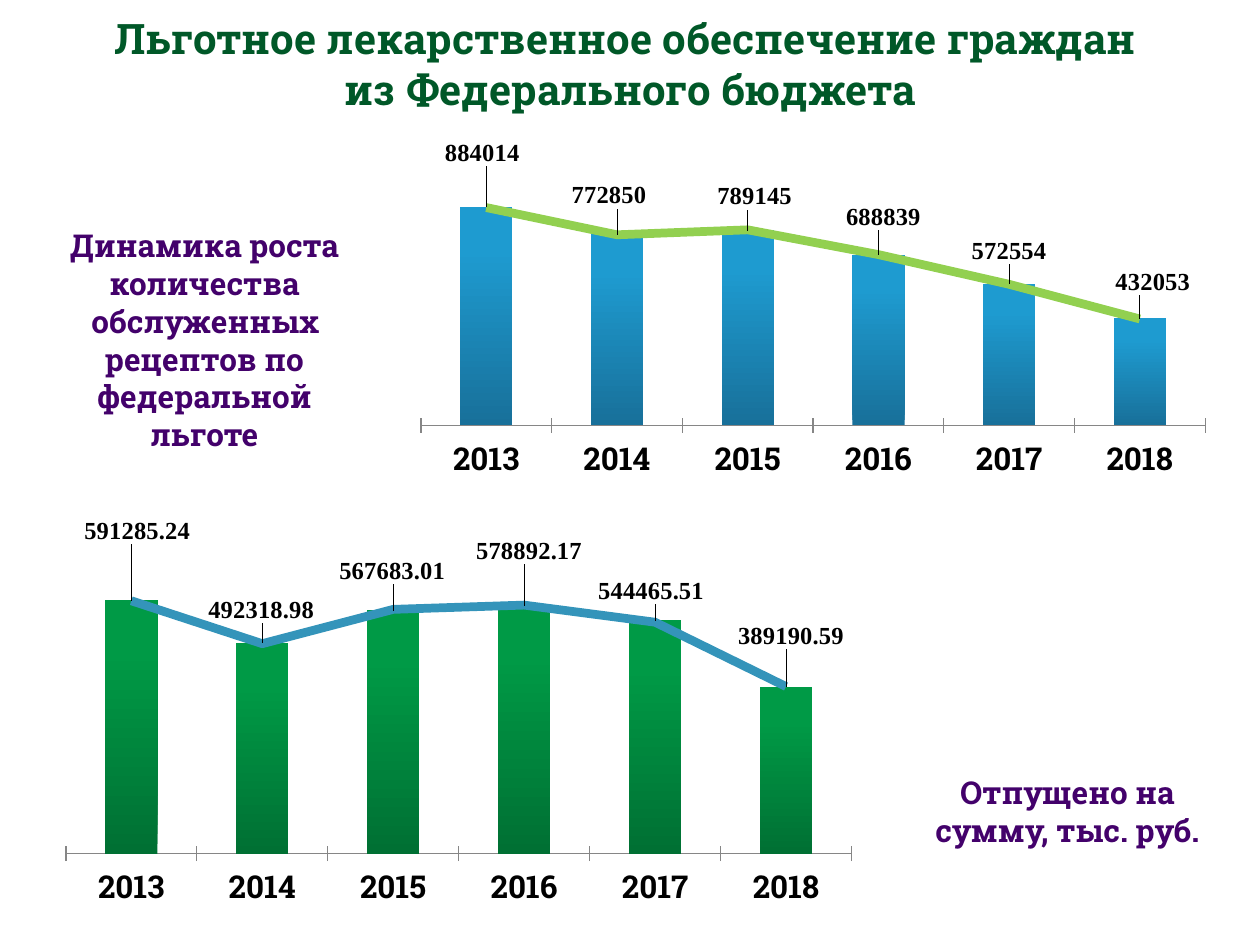
"""Slide with two column-and-line charts on subsidised medicine supply."""
from dataclasses import dataclass
from typing import Any

import pptx
import pptx.chart.data
import pptx.dml.color
import pptx.enum.chart
import pptx.enum.text
import pptx.oxml
import pptx.oxml.ns
import pptx.util

SCALE = 914400 / 126
YEARS = [str(year) for year in range(2013, 2019)]


@dataclass(frozen=True)
class Theme:
    font: str = "Roboto Slab"
    label_font: str = "Times New Roman"
    title: str = "005828"
    caption: str = "43016B"
    text: str = "000000"
    axis: str = "868686"
    title_size: int = 24
    body_size: int = 18
    label_size: int = 14
    line_width: int = 5


@dataclass(frozen=True)
class Box:
    x: int
    y: int
    w: int
    h: int


@dataclass(frozen=True)
class Caption:
    box: Box
    text: str
    size: int
    color: str
    anchor: Any = pptx.enum.text.MSO_ANCHOR.TOP


@dataclass(frozen=True)
class Combo:
    box: Box
    plot: tuple[float, float, float, float]
    columns: list[float]
    trend: list[float]
    top: int
    dark: str
    light: str
    line: str
    shifts: list[tuple[int, int]]


THEME = Theme()

CAPTIONS = [
    Caption(Box(35, 10, 1191, 106),
            "Льготное лекарственное обеспечение граждан \vиз Федерального бюджета",
            THEME.title_size, THEME.title, pptx.enum.text.MSO_ANCHOR.MIDDLE),
    Caption(Box(40, 220, 329, 242),
            "Динамика роста количества обслуженных рецептов по федеральной льготе",
            THEME.body_size, THEME.caption),
    Caption(Box(903, 767, 329, 90), "Отпущено на сумму, тыс. руб.",
            THEME.body_size, THEME.caption),
]

COMBOS = [
    Combo(Box(402, 136, 823, 358), (0.023, 0.117, 0.953, 0.692),
          [884014, 772850, 789145, 688839, 572554, 432053],
          [880000, 770000, 790000, 690000, 570000, 430000],
          1000000, "18709A", "1E9BD0", "92D050",
          [(-4, -35), (-8, -20), (7, -15), (5, -19), (0, -14), (13, -18)]),
    Combo(Box(-43, 514, 900, 397), (0.121, 0.1, 0.873, 0.756),
          [591285.24, 492318.98, 567683.01, 578892.17, 544465.51, 389190.59],
          [590000, 490000, 570000, 580000, 540000, 390000],
          700000, "007033", "009A46", "3494BA",
          [(6, -51), (-1, -14), (-1, -21), (5, -36), (-4, -11), (5, -32)]),
]


def emu(px: int) -> int:
    return round(px * SCALE)


def place(box: Box) -> list[int]:
    return [emu(v) for v in (box.x, box.y, box.w, box.h)]


def rgb(color: str) -> pptx.dml.color.RGBColor:
    return pptx.dml.color.RGBColor.from_string(color)


def apply(target: Any, values: dict[str, Any]) -> None:
    for name, value in values.items():
        setattr(target, name, value)


def style_font(font: Any, name: str, size: int, color: str, bold: bool = True) -> None:
    apply(font, {"name": name, "size": pptx.util.Pt(size), "bold": bold})
    font.color.rgb = rgb(color)


def xml(body: str) -> Any:
    tag, _, rest = body.partition(">")
    return pptx.oxml.parse_xml(f"{tag} {pptx.oxml.ns.nsdecls('c')}>{rest}")


def layout(fields: dict[str, Any]) -> Any:
    inner = "".join(f'<c:{k} val="{v}"/>' for k, v in fields.items())
    return xml(f"<c:layout><c:manualLayout>{inner}</c:manualLayout></c:layout>")


def add_caption(s: Any, item: Caption) -> None:
    tf = s.shapes.add_textbox(*place(item.box)).text_frame
    apply(tf, {"word_wrap": True, "vertical_anchor": item.anchor, "text": item.text})
    p = tf.paragraphs[0]
    p.alignment = pptx.enum.text.PP_ALIGN.CENTER
    for r in p.runs:
        style_font(r.font, THEME.font, item.size, item.color)


def split_trend(chart: Any) -> None:
    bar = chart.element.xpath(".//c:barChart")[0]
    ser = bar.xpath("c:ser")[1]
    for old in ser.xpath("c:invertIfNegative"):
        ser.remove(old)
    line = xml('<c:lineChart><c:grouping val="standard"/><c:varyColors val="0"/>'
               '<c:marker val="1"/></c:lineChart>')
    line.insert(2, ser)
    for axis in bar.xpath("c:axId"):
        line.append(xml(f'<c:axId><!-- --></c:axId>'))
        line[-1].set("val", axis.get("val"))
        line[-1].remove(line[-1][0])
    bar.addnext(line)


def style_axes(chart: Any, top: int) -> None:
    apply(chart.value_axis, {"minimum_scale": 0, "maximum_scale": top,
                             "has_major_gridlines": False, "visible": False})
    axis = chart.category_axis
    apply(axis, {"major_tick_mark": pptx.enum.chart.XL_TICK_MARK.CROSS,
                 "has_major_gridlines": False})
    axis.format.line.color.rgb = rgb(THEME.axis)
    style_font(axis.tick_labels.font, THEME.font, THEME.body_size, THEME.text)


def style_columns(ser: Any, item: Combo) -> None:
    fill = ser.format.fill
    fill.gradient()
    fill.gradient_angle = 90
    for stop, color, position in zip(fill.gradient_stops, (item.dark, item.light), (0, 0.8)):
        stop.color.rgb = rgb(color)
        stop.position = position


def add_labels(chart: Any, ser: Any, item: Combo) -> None:
    position = pptx.enum.chart.XL_LABEL_POSITION.OUTSIDE_END
    apply(ser.data_labels, {"show_value": True, "position": position})
    style_font(ser.data_labels.font, THEME.label_font, THEME.label_size, THEME.text)
    for i, _ in enumerate(item.shifts):
        label = ser.points[i].data_label
        label.position = position
        style_font(label.font, THEME.label_font, THEME.label_size, THEME.text)
    for element, (dx, dy) in zip(chart.element.xpath(".//c:dLbl"), item.shifts):
        element.insert(1, layout({"x": round(dx / item.box.w, 4), "y": round(dy / item.box.h, 4)}))


def add_combo(s: Any, item: Combo) -> None:
    data = pptx.chart.data.CategoryChartData()
    data.categories = YEARS
    data.add_series("Series 1", item.columns)
    data.add_series("Series 2", item.trend)
    kind = pptx.enum.chart.XL_CHART_TYPE.COLUMN_CLUSTERED
    chart = s.shapes.add_chart(kind, *place(item.box), data).chart
    apply(chart, {"has_legend": False, "has_title": False})
    style_font(chart.font, THEME.font, THEME.body_size, THEME.text, False)
    split_trend(chart)
    area = chart.element.xpath(".//c:plotArea")[0]
    for old in area.xpath("c:layout"):
        area.remove(old)
    area.insert(0, layout({"layoutTarget": "inner", "xMode": "edge", "yMode": "edge",
                           **dict(zip("xywh", item.plot))}))
    style_axes(chart, item.top)
    bars, trend = chart.plots
    apply(bars, {"gap_width": 150, "vary_by_categories": False})
    style_columns(bars.series[0], item)
    add_labels(chart, bars.series[0], item)
    line = trend.series[0]
    line.smooth = False
    line.marker.style = pptx.enum.chart.XL_MARKER_STYLE.NONE
    line.format.line.color.rgb = rgb(item.line)
    line.format.line.width = pptx.util.Pt(THEME.line_width)


def main() -> None:
    prs = pptx.Presentation()
    apply(prs, {"slide_width": emu(1260), "slide_height": emu(945)})
    s = prs.slides.add_slide(prs.slide_layouts[6])
    for combo in COMBOS:
        add_combo(s, combo)
    for caption in CAPTIONS:
        add_caption(s, caption)
    prs.save("out.pptx")


if __name__ == "__main__":
    main()
